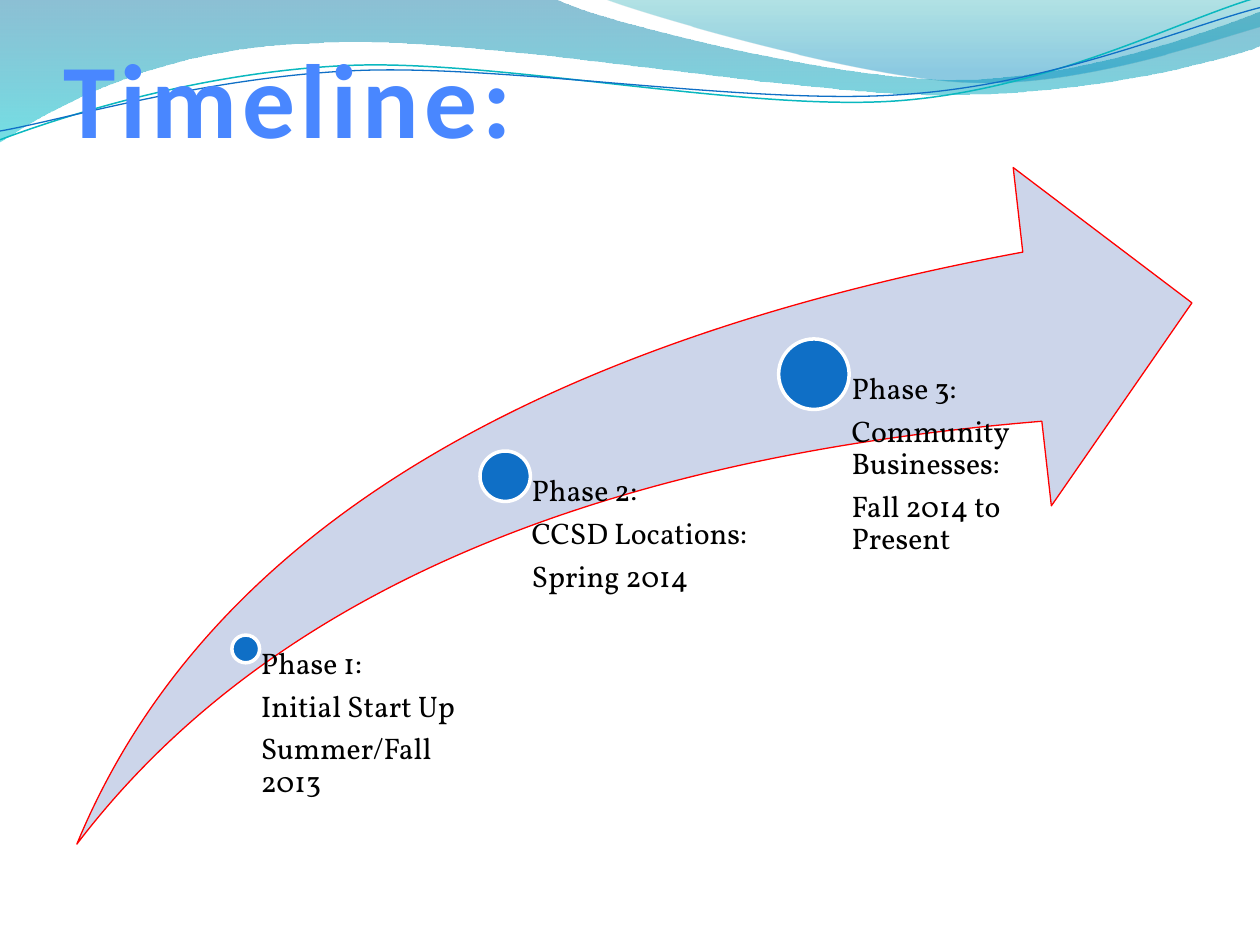
from math import cos, radians, sin

from lxml import etree
from pptx import Presentation
from pptx.dml.color import RGBColor
from pptx.enum.shapes import MSO_SHAPE
from pptx.enum.text import MSO_ANCHOR, MSO_AUTO_SIZE, PP_ALIGN
from pptx.oxml import parse_xml
from pptx.oxml.ns import nsdecls, qn
from pptx.util import Pt

PX = 9144
SWOOSH, ELLIPSE = MSO_SHAPE.SWOOSH_ARROW, MSO_SHAPE.OVAL
TOP, BOTTOM = MSO_ANCHOR.TOP, MSO_ANCHOR.BOTTOM
LEFT, NO_FIT = PP_ALIGN.LEFT, MSO_AUTO_SIZE.NONE


def color(value):
    return RGBColor.from_string(value)


def gradient(stops):
    stop_xml = "".join(
        f'<a:gs pos="{place * 1000}"><a:srgbClr val="{tint}">'
        f'<a:alpha val="{opacity * 1000}"/></a:srgbClr></a:gs>'
        for place, tint, opacity in stops)
    return parse_xml(f'<a:gradFill {nsdecls("a")}><a:gsLst>{stop_xml}</a:gsLst>'
                     '<a:lin ang="5400000" scaled="0"/></a:gradFill>')


deck = Presentation()
deck.slide_width, deck.slide_height = 1000 * PX, 750 * PX
page = deck.slides.add_slide(deck.slide_layouts[5])
shapes = page.shapes

waves = [
    ((-1, -1, 1002, 114), 0,
     [(0, 0), (440, -1), (476, 17, 664, 63, 758, 63), (853, 63, 958, 26, 1000, 9),
      (1001, 36), (983, 44, 870, 76, 746, 75), (622, 75, 382, 28, 257, 34),
      (129, 36, 46, 83, -1, 113), (0, 0)],
     [(0, "0074A1", 45), (100, "00C6CF", 55)], None),
    ((479, -1, 521, 70), 0,
     [(479, -1), (509, 11, 682, 62, 769, 65), (856, 69, 961, 32, 1000, 21),
      (1000, 0), (479, -1)],
     [(0, "00A1A9", 30), (80, "008BBF", 45)], None),
    ((-2, 22, 1002, 71), 357.3,
     [(0, 111), (48, 93, 158, 57, 277, 52), (395, 47, 593, 89, 713, 80),
      (833, 71, 938, 15, 998, -2)], None, ("0AB8BF", 0.85)),
    ((-2, 30, 1003, 58), 357.3,
     [(0, 104), (47, 96, 164, 61, 283, 56), (403, 51, 597, 84, 717, 75),
      (836, 67, 941, 21, 1000, 6)], None, ("0F6FC6", 0.75)),
]
for (left, top, width, height), turn, segments, stops, stroke in waves:
    builder = shapes.build_freeform(left, top, scale=PX)
    builder.add_line_segments([(left + width, top + height)], close=bool(stops))
    wave = builder.convert_to_shape()
    wave.shadow.inherit = False
    wave.rotation = turn
    outline = wave.element.spPr.find(".//" + qn("a:path"))
    for command in list(outline):
        outline.remove(command)
    outline.set("w", str(width * PX))
    outline.set("h", str(height * PX))
    center_x, center_y, angle = left + width / 2, top + height / 2, radians(-turn)
    for index, segment in enumerate(segments):
        kind = "moveTo" if index == 0 else "lnTo" if len(segment) == 2 else "cubicBezTo"
        command = etree.SubElement(outline, qn(f"a:{kind}"))
        for x, y in zip(segment[::2], segment[1::2]):
            dx, dy = x - center_x, y - center_y
            local_x = dx * cos(angle) - dy * sin(angle) + width / 2
            local_y = dx * sin(angle) + dy * cos(angle) + height / 2
            etree.SubElement(command, qn("a:pt"),
                             x=str(round(local_x * PX)), y=str(round(local_y * PX)))
    if stops:
        etree.SubElement(outline, qn("a:close"))
        wave.line.fill.background()
        wave.element.spPr.find(qn("a:custGeom")).addnext(gradient(stops))
    else:
        wave.fill.background()
        wave.line.color.rgb = color(stroke[0])
        wave.line.width = Pt(stroke[1])

title = shapes.title
shapes.element.append(title.element)
title.left, title.top, title.width, title.height = 50 * PX, 77 * PX, 900 * PX, 125 * PX
title.text_frame.text = "Timeline:"
title_frame = {"auto_size": NO_FIT, "vertical_anchor": BOTTOM, "margin_left": 0,
               "margin_right": 0, "margin_top": 5 * PX, "margin_bottom": 75 * PX}
for name, value in title_frame.items():
    setattr(title.text_frame, name, value)
para = title.text_frame.paragraphs[0]
para.alignment = LEFT
span = para.runs[0]
for name, value in {"name": "Calibri", "size": Pt(60.3), "bold": True}.items():
    setattr(span.font, name, value)
span_format = span.font._element
span_format.set("spc", "300")
span_format.insert(0, gradient([(10, "4987FF", 100), (75, "00539E", 100)]))
span_format.insert(0, parse_xml(
    f'<a:ln {nsdecls("a")} w="11430"><a:solidFill><a:srgbClr val="F4F5FA"/>'
    '</a:solidFill></a:ln>'))

arrow = shapes.add_shape(SWOOSH, 61 * PX, 133 * PX, 885 * PX, 537 * PX)
arrow.adjustments[0] = arrow.adjustments[1] = 0.25
arrow.shadow.inherit = False
arrow.fill.solid()
arrow.fill.fore_color.rgb = color("CCD5EA")
arrow.line.color.rgb = color("FF0000")
arrow.line.width = Pt(0.75)

phases = [
    (195, 515, 22, 200, 12, ["Phase 1:", "Initial Start Up", "Summer/Fall 2013"]),
    (401, 378, 40, 206, 21, ["Phase 2:", "CCSD Locations:", "Spring 2014"]),
    (646, 297, 56, 206, 30, ["Phase 3:", "Community Businesses:", "Fall 2014 to Present"]),
]
label_bottom = 670
para_format = {"alignment": LEFT, "line_spacing": 0.9, "space_after": Pt(6)}
label_frame = {"word_wrap": True, "auto_size": NO_FIT, "vertical_anchor": TOP,
               "margin_top": 0, "margin_right": 0, "margin_bottom": 0}
for x, y, size, width, inset, lines in phases:
    dot = shapes.add_shape(ELLIPSE, (x - size // 2) * PX, (y - size // 2) * PX,
                           size * PX, size * PX)
    dot.shadow.inherit = False
    dot.fill.solid()
    dot.fill.fore_color.rgb = color("0F6FC6")
    dot.line.color.rgb = color("FFFFFF")
    dot.line.width = Pt(2)

    box = shapes.add_textbox(x * PX, y * PX, width * PX, (label_bottom - y) * PX)
    frame = box.text_frame
    for name, value in label_frame.items():
        setattr(frame, name, value)
    frame.margin_left = inset * PX
    frame.text = "\n".join(lines)
    for para in frame.paragraphs:
        for name, value in para_format.items():
            setattr(para, name, value)
        font = para.runs[0].font
        font.name, font.size = "Vollkorn", Pt(17)
        font.color.rgb = color("000000")

deck.save("out.pptx")
